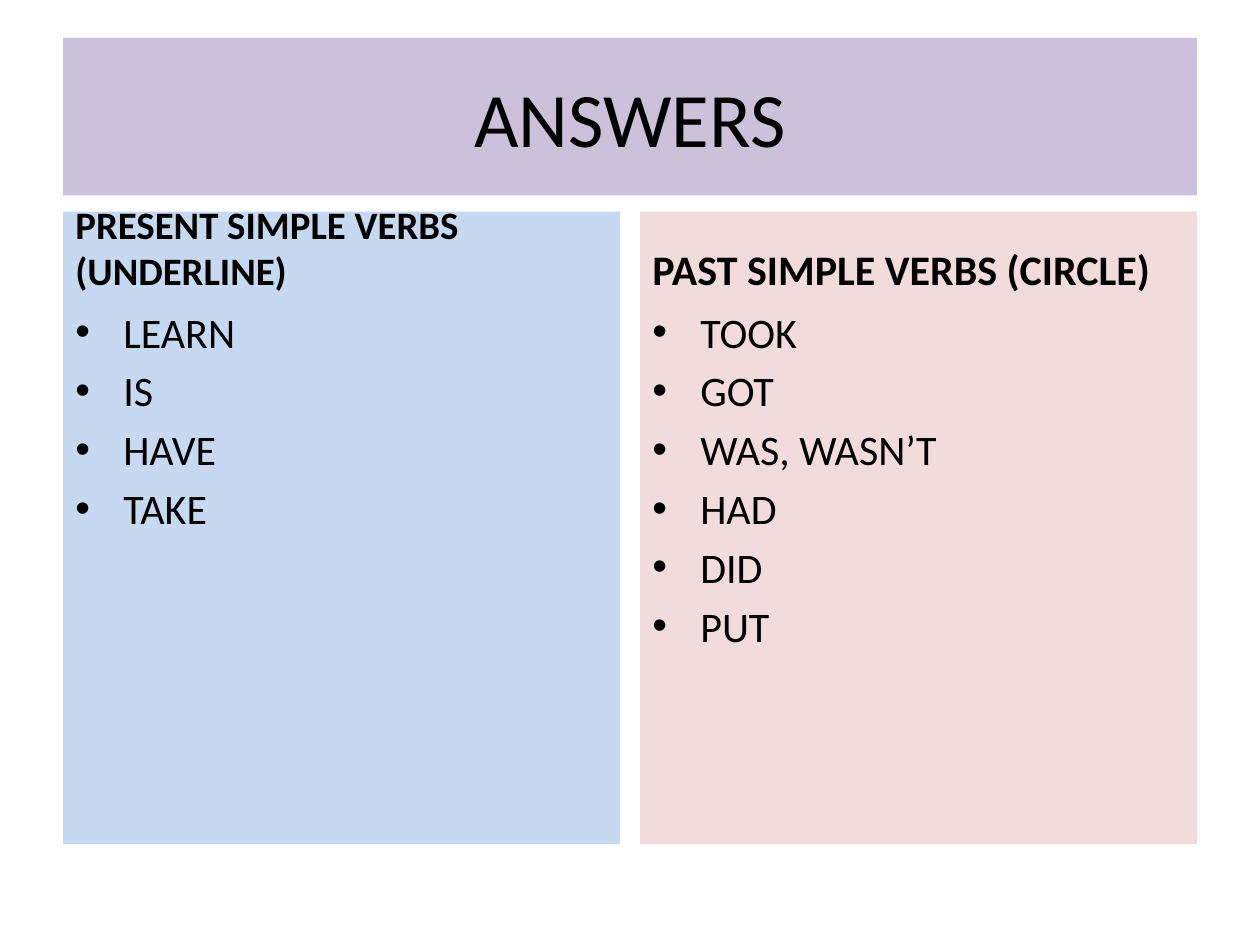
from pptx import Presentation
from pptx.dml.color import RGBColor
from pptx.enum.text import MSO_ANCHOR as Anchor, MSO_AUTO_SIZE as AutoSize, PP_ALIGN as Align
from pptx.util import Inches, Pt
from lxml.etree import SubElement
from pptx.oxml.ns import qn

WIDTH, HEIGHT = 10, 7.5
MARGIN, GUTTER = 0.5, 0.16
COLUMN_WIDTH = (WIDTH - 2 * MARGIN - GUTTER) / 2
TITLE_ROW, HEADING_ROW, LIST_ROW = (0.3, 1.25), (1.68, 0.7), (2.38, 4.32)  # top, height
HANGING = 0.38

COLUMNS = [
    ("PRESENT SIMPLE VERBS (UNDERLINE)", 22.2, "C6D9F1",
     ["LEARN", "IS", "HAVE", "TAKE"]),
    ("PAST SIMPLE VERBS (CIRCLE)", 24, "F2DCDB",
     ["TOOK", "GOT", "WAS, WASN’T", "HAD", "DID", "PUT"]),
]


def color(hex_code):
    return RGBColor.from_string(hex_code)


class AnswerSlide:
    font = "Calibri"
    ink = "000000"
    list_size = 24

    def __init__(self, deck):
        self.slide = deck.slides.add_slide(deck.slide_layouts[5])

    def place(self, panel, left, width, row, fill):
        top, height = row
        panel.left, panel.top = Inches(left), Inches(top)
        panel.width, panel.height = Inches(width), Inches(height)
        panel.fill.solid()
        panel.fill.fore_color.rgb = color(fill)

    def set_text(self, panel, text, size, anchor, align=Align.LEFT, bold=False, before=0.0):
        frame = panel.text_frame
        frame.text = text
        frame.word_wrap = True
        frame.auto_size = AutoSize.NONE
        frame.vertical_anchor = anchor
        for paragraph in frame.paragraphs:
            paragraph.alignment = align
            paragraph.space_before = Pt(before * size)
            for run in paragraph.runs:
                run.font.name, run.font.size, run.font.bold = self.font, Pt(size), bold
                run.font.color.rgb = color(self.ink)

    def title(self, text, fill):
        banner = self.slide.shapes.title
        self.place(banner, MARGIN, WIDTH - 2 * MARGIN, TITLE_ROW, fill)
        self.set_text(banner, text, 44, Anchor.MIDDLE, Align.CENTER)

    def panel(self, column, row, fill):
        panel = self.slide.shapes.add_textbox(0, 0, 0, 0)
        left = MARGIN + column * (COLUMN_WIDTH + GUTTER)
        self.place(panel, left, COLUMN_WIDTH, row, fill)
        return panel

    def heading(self, column, text, size, fill):
        heading = self.panel(column, HEADING_ROW, fill)
        self.set_text(heading, text, size, Anchor.BOTTOM, bold=True, before=0.2)

    def bullets(self, column, verbs, fill):
        verb_list = self.panel(column, LIST_ROW, fill)
        self.set_text(verb_list, "\n".join(verbs), self.list_size, Anchor.TOP, before=0.2)
        for paragraph in verb_list.text_frame.paragraphs:
            properties = paragraph._p.get_or_add_pPr()
            properties.set("marL", str(Inches(HANGING)))
            properties.set("indent", str(-Inches(HANGING)))
            SubElement(properties, qn("a:buFont")).set("typeface", "Arial")
            SubElement(properties, qn("a:buChar")).set("char", "•")


def main():
    deck = Presentation()
    deck.slide_width, deck.slide_height = Inches(WIDTH), Inches(HEIGHT)
    answers = AnswerSlide(deck)

    # Title banner
    answers.title("ANSWERS", "CCC1DA")

    # One column per tense: heading above its verbs
    for column, (heading, size, fill, verbs) in enumerate(COLUMNS):
        answers.heading(column, heading, size, fill)
        answers.bullets(column, verbs, fill)

    deck.save("out.pptx")


if __name__ == "__main__":
    main()
